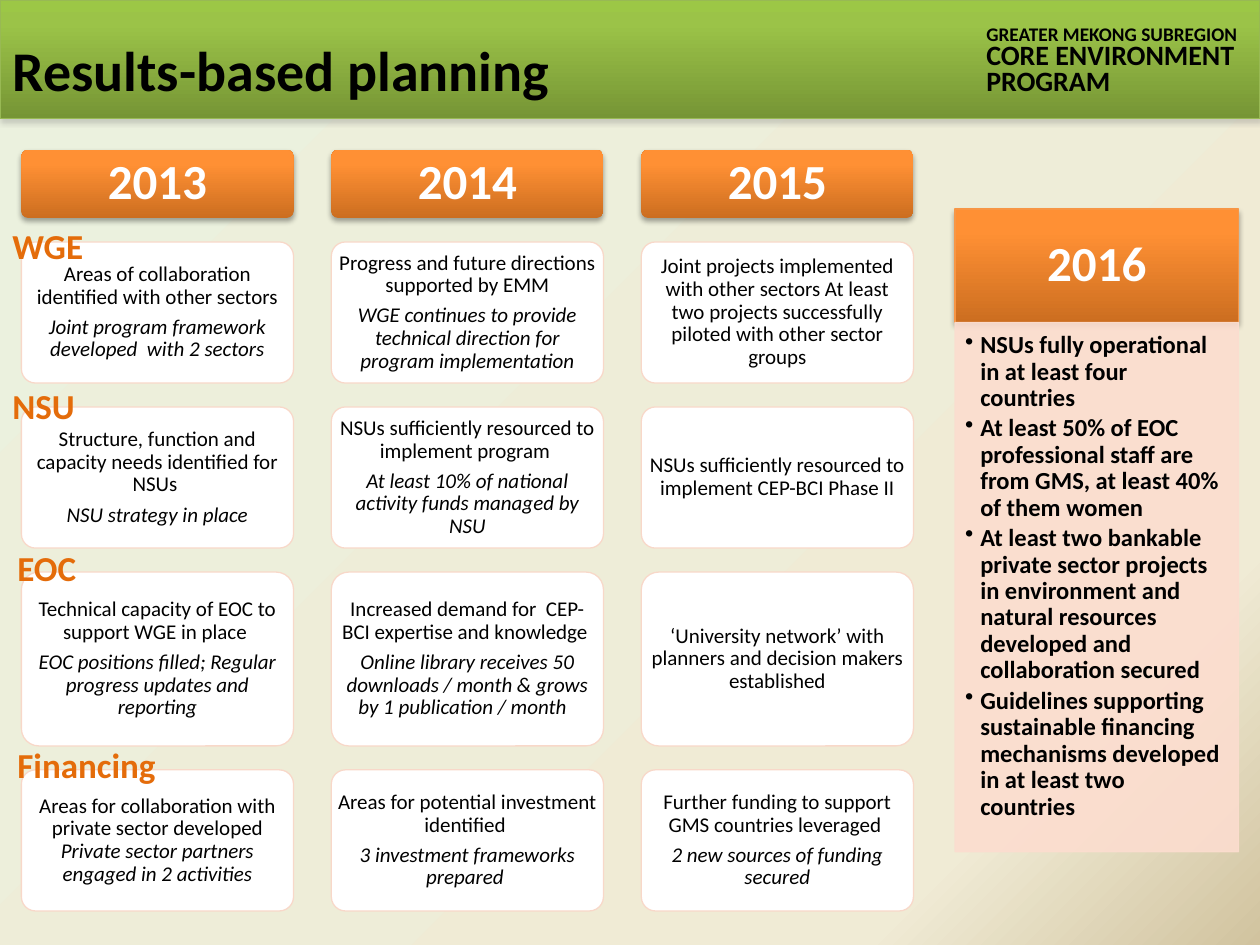
from lxml.etree import SubElement
from pptx import Presentation
from pptx.dml.color import RGBColor
from pptx.enum.shapes import MSO_SHAPE as Shape
from pptx.enum.text import MSO_ANCHOR as Anchor, PP_ALIGN as Align
from pptx.oxml.ns import qn
from pptx.util import Inches, Pt

# Content
TITLE = "Results-based planning"
PROGRAM = [("GREATER MEKONG SUBREGION", 11), ("CORE ENVIRONMENT PROGRAM", 16)]
YEARS = ["2013", "2014", "2015"]
# Each row: label, label left and top, card height, (target, indicator) per year
ROWS = [
    ("WGE", 0, 1.73, 1.12, [
        ("Areas of collaboration identified with other sectors",
         "Joint program framework developed  with 2 sectors"),
        ("Progress and future directions supported by EMM",
         "WGE continues to provide technical direction for program implementation"),
        ("Joint projects implemented with other sectors At least two projects "
         "successfully piloted with other sector groups", "")]),
    ("NSU", 0, 3, 1.12, [
        ("Structure, function and capacity needs identified for NSUs ",
         "NSU strategy in place"),
        ("NSUs sufficiently resourced to implement program ",
         "At least 10% of national activity funds managed by NSU"),
        ("NSUs sufficiently resourced to implement CEP-BCI Phase II", "")]),
    ("EOC", 0.04, 4.29, 1.38, [
        ("Technical capacity of EOC to support WGE in place ",
         "EOC positions filled; Regular progress updates and reporting"),
        ("Increased demand for  CEP-BCI expertise and knowledge ",
         "Online library receives 50 downloads / month & grows by 1 publication / month  "),
        ("‘University network’ with planners and decision makers established", "")]),
    ("Financing", 0.04, 5.85, 1.12, [
        ("Areas for collaboration with private sector developed ",
         "Private sector partners engaged in 2 activities"),
        ("Areas for potential investment identified ", "3 investment frameworks prepared "),
        ("Further funding to support GMS countries leveraged ",
         "2 new sources of funding secured")]),
]
SAME_PARAGRAPH = ("Financing", 0)  # target and indicator run on in this card
FINAL_YEAR = "2016"
OUTCOMES = [
    "NSUs fully operational in at least four countries",
    "At least 50% of EOC professional staff are from GMS, at least 40% of them women",
    "At least two bankable private sector projects in environment and natural "
    "resources developed and collaboration secured",
    "Guidelines supporting sustainable financing  mechanisms developed in at least "
    "two countries",
]

# Style and grid
FONT = "Calibri"
ORANGE = [(0, "CC6E20"), (80, "FF9034"), (100, "FF9136")]
GREEN = [(0, "9CC746"), (20, "9BC348"), (100, "769535")]
BACKGROUND = [(0, "EBF1DE"), (82, "F0EBD5"), (100, "D1C39F")]
LEFT, TOP, COLUMN_WIDTH, COLUMN_STEP = 0.17, 1.19, 2.16, 2.46
YEAR_HEIGHT, ROW_GAP = 0.54, 0.19
PANEL_LEFT, PANEL_TOP, PANEL_WIDTH, PANEL_HEAD, PANEL_BODY = 7.58, 1.66, 2.25, 0.9, 4.2


def color(value):
    return RGBColor.from_string(value)


def gradient(fill, owner, stops, angle=None):
    """Linear at an angle, or circular from the top left corner."""
    fill.gradient()
    element = owner.find(".//" + qn("a:gradFill"))
    for child in list(element):
        element.remove(child)
    stop_list = SubElement(element, qn("a:gsLst"))
    for position, value in stops:
        stop = SubElement(stop_list, qn("a:gs"), pos=str(position * 1000))
        SubElement(stop, qn("a:srgbClr"), val=value)
    if angle is None:
        circle = SubElement(element, qn("a:path"))
        circle.set("path", "circle")
        SubElement(circle, qn("a:fillToRect"), r="100000", b="100000")
    else:
        SubElement(element, qn("a:lin"), ang=str(angle * 60000), scaled="0")


def add_block(slide, kind, box, fill, line=None, angle=270, shadow=None, alpha=None):
    shape = slide.shapes.add_shape(kind, *map(Inches, box))
    if kind == Shape.ROUNDED_RECTANGLE:
        shape.adjustments[0] = 0.1
    if isinstance(fill, list):
        gradient(shape.fill, shape.element.spPr, fill, angle)
    else:
        shape.fill.solid()
        shape.fill.fore_color.rgb = color(fill)
    if line:
        shape.line.color.rgb = color(line)
        shape.line.width = Pt(0.75)
    else:
        shape.line.fill.background()
    if alpha:
        for solid in shape.element.spPr.iter(qn("a:solidFill")):
            SubElement(solid[0], qn("a:alpha"), val=str(alpha * 1000))
    shape.shadow.inherit = False
    if shadow:
        effects = shape.element.spPr.find(qn("a:effectLst"))
        outer = SubElement(effects, qn("a:outerShdw"), blurRad="40000",
                           dist="23000", dir="5400000", rotWithShape="0")
        tint = SubElement(outer, qn("a:srgbClr"), val=shadow)
        SubElement(tint, qn("a:alpha"), val="35000")
    return shape


def set_insets(frame, left, top, right, bottom):
    frame.word_wrap = True
    frame.margin_left, frame.margin_top = Inches(left), Inches(top)
    frame.margin_right, frame.margin_bottom = Inches(right), Inches(bottom)


def write(frame, index, text, size, value="000000", bold=False, italic=False,
          align=Align.LEFT, spacing=None, after=0, bullet=False):
    paragraph = frame.add_paragraph() if index else frame.paragraphs[0]
    if bullet:
        properties = paragraph._p.get_or_add_pPr()
        properties.set("marL", str(Inches(0.12)))
        properties.set("indent", str(-Inches(0.12)))
        SubElement(properties, qn("a:buChar"), char="•")
    paragraph.add_run().text = text
    paragraph.alignment = align
    if spacing:
        paragraph.line_spacing = spacing
    paragraph.space_after = Pt(size * after)
    font = paragraph.font
    font.name, font.size, font.bold, font.italic = FONT, Pt(size), bold, italic
    font.color.rgb = color(value)
    return paragraph


def add_year(slide, kind, box, year, inset, line=None):
    shape = add_block(slide, kind, box, ORANGE, line, shadow="000000")
    set_insets(shape.text_frame, *[inset] * 4)
    shape.text_frame.vertical_anchor = Anchor.MIDDLE
    write(shape.text_frame, 0, year, 28, "FFFFFF", bold=True,
          align=Align.CENTER, spacing=0.9, after=0.35)


def add_card(slide, box, target, indicator, joined):
    shape = add_block(slide, Shape.ROUNDED_RECTANGLE, box, "FFFFFF", "F8D8C9")
    frame = shape.text_frame
    set_insets(frame, *[0.02] * 4)
    frame.vertical_anchor = Anchor.MIDDLE
    style = dict(align=Align.CENTER, spacing=0.9, after=0.35)
    paragraph = write(frame, 0, target, 12, **style)
    if joined:
        run = paragraph.add_run()
        run.text, run.font.italic = indicator, True
    elif indicator:
        write(frame, 1, indicator, 12, italic=True, **style)


def add_text_box(slide, *box):
    frame = slide.shapes.add_textbox(*map(Inches, box)).text_frame
    frame.word_wrap = True
    return frame


def main():
    presentation = Presentation()
    presentation.slide_width, presentation.slide_height = Inches(10), Inches(7.5)
    slide = presentation.slides.add_slide(presentation.slide_layouts[5])
    gradient(slide.background.fill, slide.element, BACKGROUND)

    # Header band, program name and title
    add_block(slide, Shape.RECTANGLE, (0, 0, 10, 0.94), GREEN, "98B954", 90, "808080")
    program = add_text_box(slide, 7.73, 0.1, 2.46, 0.73)
    for index, (text, size) in enumerate(PROGRAM):
        write(program, index, text, size, bold=True, spacing=Pt(15))
    title = slide.shapes.title
    title.left, title.top, title.width, title.height = map(Inches, (0, 0.17, 9, 0.75))
    title.text_frame.vertical_anchor = Anchor.MIDDLE
    write(title.text_frame, 0, TITLE, 32, bold=True)
    slide.shapes._spTree.append(title.element)  # in front of the band

    # Year columns with their cards
    for column, year in enumerate(YEARS):
        left = LEFT + column * COLUMN_STEP
        add_year(slide, Shape.ROUNDED_RECTANGLE, (left, TOP, COLUMN_WIDTH, YEAR_HEIGHT),
                 year, 0.04)
        top = TOP + YEAR_HEIGHT + ROW_GAP
        for label, _, _, height, cards in ROWS:
            add_card(slide, (left, top, COLUMN_WIDTH, height), *cards[column],
                     joined=(label, column) == SAME_PARAGRAPH)
            top += height + ROW_GAP

    # Final year panel
    add_year(slide, Shape.RECTANGLE, (PANEL_LEFT, PANEL_TOP, PANEL_WIDTH, PANEL_HEAD),
             FINAL_YEAR, 0.12, "F79646")
    panel = add_block(slide, Shape.RECTANGLE,
                      (PANEL_LEFT, PANEL_TOP + PANEL_HEAD, PANEL_WIDTH, PANEL_BODY),
                      "FCDDCF", "FCDDCF", alpha=90).text_frame
    set_insets(panel, 0.08, 0.08, 0.11, 0.12)
    panel.vertical_anchor = Anchor.TOP
    for index, outcome in enumerate(OUTCOMES):
        write(panel, index, outcome, 14, bold=True, spacing=0.9, after=0.15, bullet=True)

    # Row labels
    for label, left, top, _, _ in ROWS:
        write(add_text_box(slide, left, top, 1.83, 0.44), 0, label, 20, "E46C0A", bold=True)

    presentation.save("out.pptx")


if __name__ == "__main__":
    main()
